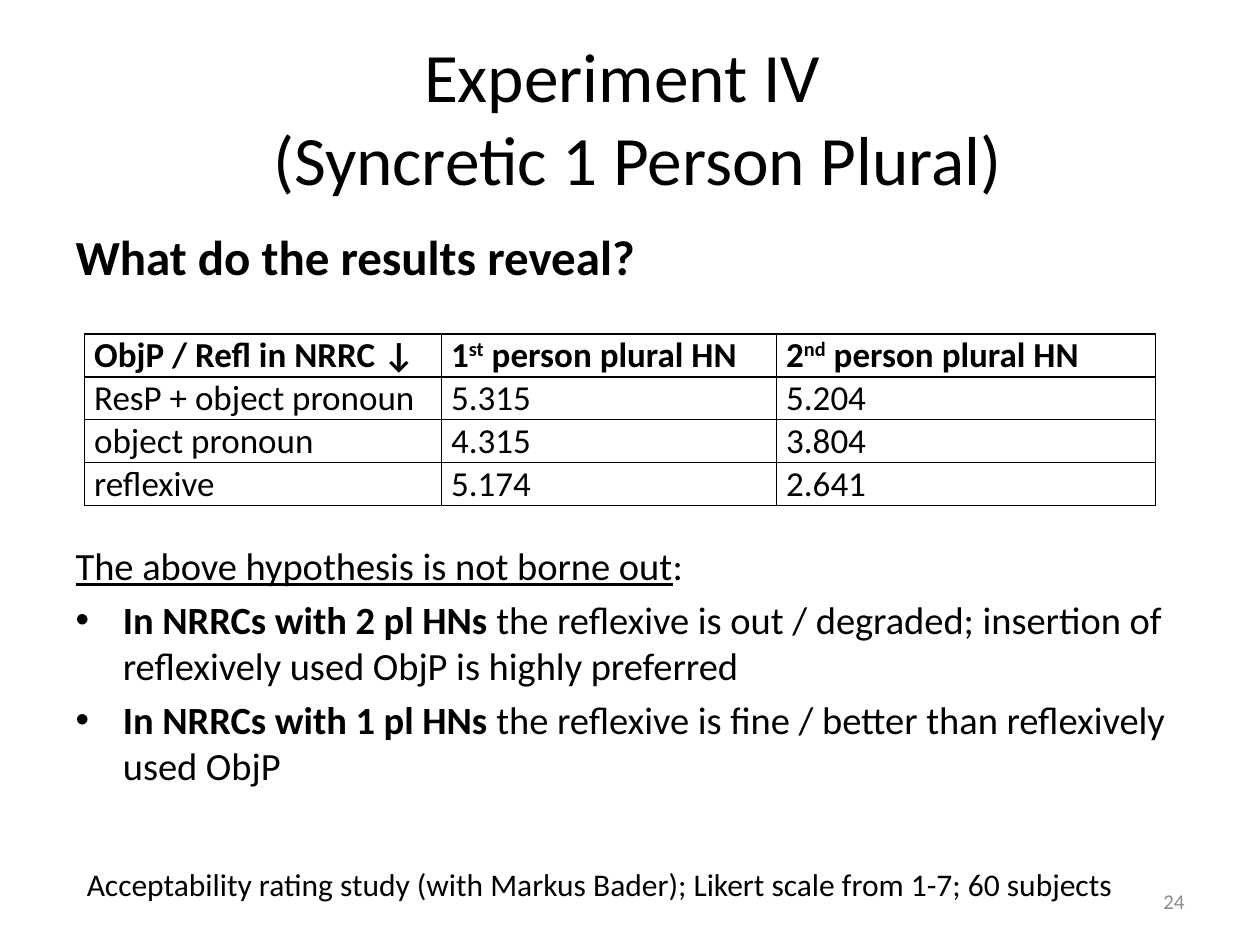
from lxml import etree
from pptx import Presentation
from pptx.dml.color import RGBColor
from pptx.enum.text import MSO_ANCHOR, MSO_AUTO_SIZE, PP_ALIGN
from pptx.oxml.ns import qn
from pptx.util import Pt

BLACK = RGBColor(0x00, 0x00, 0x00)
GREY = RGBColor(0x8C, 0x8C, 0x8C)
FONT = "Calibri"
NO_FIT = MSO_AUTO_SIZE.NONE
MIDDLE = MSO_ANCHOR.MIDDLE
LEFT, CENTER, RIGHT = PP_ALIGN.LEFT, PP_ALIGN.CENTER, PP_ALIGN.RIGHT


def add_span(para, text, size, bold=False, color=BLACK):
    span = para.add_run()
    span.text = text
    span.font.name = FONT
    span.font.size = Pt(size)
    span.font.bold = bold
    span.font.color.rgb = color
    return span


def add_borders(cell):
    properties = cell._tc.get_or_add_tcPr()
    for side in ("lnL", "lnR", "lnT", "lnB"):
        line = etree.SubElement(properties, qn(f"a:{side}"), w=str(Pt(1)))
        fill = etree.SubElement(line, qn("a:solidFill"))
        etree.SubElement(fill, qn("a:srgbClr"), val=str(BLACK))


deck = Presentation()
deck.slide_width, deck.slide_height = Pt(720), Pt(540)
page = deck.slides.add_slide(deck.slide_layouts[1])

# Title
title = page.shapes.title
title.left, title.top, title.width, title.height = Pt(36), Pt(21.6), Pt(648), Pt(90)
title.text_frame.text = "Experiment IV \v (Syncretic 1 Person Plural)"
title.text_frame.auto_size = NO_FIT
title.text_frame.vertical_anchor = MIDDLE
title_para = title.text_frame.paragraphs[0]
title_para.alignment = CENTER
for span in title_para.runs:
    span.font.name = FONT
    span.font.size = Pt(39.6)
    span.font.color.rgb = BLACK

# Question, finding and bullets
body = page.placeholders[1]
body.left, body.top, body.width, body.height = Pt(36), Pt(126), Pt(648), Pt(356.4)
frame = body.text_frame
frame.auto_size = NO_FIT

question = frame.paragraphs[0]
add_span(question, "What do the results reveal?", 28, bold=True)

finding = frame.add_paragraph()
finding.space_before = Pt(146.5)  # leaves room for the table
add_span(finding, "The above hypothesis is not borne out", 22).font.underline = True
add_span(finding, ":", 22)
for para in (question, finding):
    etree.SubElement(para._p.get_or_add_pPr(), qn("a:buNone"))

BULLETS = [
    ("In NRRCs with 2 pl HNs ",
     "the reflexive is out / degraded; insertion of reflexively used ObjP is highly preferred"),
    ("In NRRCs with 1 pl HNs ",
     "the reflexive is fine / better than reflexively used ObjP"),
]
for condition, result in BULLETS:
    para = frame.add_paragraph()
    add_span(para, condition, 22, bold=True)
    add_span(para, result, 22)

# Ratings table; a header is (text, superscript, text)
ROWS = [
    [("ObjP / Refl in NRRC ↓",), ("1", "st", " person plural HN"), ("2", "nd", " person plural HN")],
    [("ResP + object pronoun",), ("5.315",), ("5.204",)],
    [("object pronoun",), ("4.315",), ("3.804",)],
    [("reflexive",), ("5.174",), ("2.641",)],
]
COLUMN_WIDTHS = [204, 191.5, 216.5]
ROW_HEIGHT = 24.4
table = page.shapes.add_table(
    len(ROWS), len(COLUMN_WIDTHS), Pt(48.4), Pt(190.8),
    Pt(sum(COLUMN_WIDTHS)), Pt(ROW_HEIGHT * len(ROWS))).table
table.first_row = False
table.horz_banding = False
for column, width in zip(table.columns, COLUMN_WIDTHS):
    column.width = Pt(width)
for row_index, row in enumerate(ROWS):
    table.rows[row_index].height = Pt(ROW_HEIGHT)
    for column_index, parts in enumerate(row):
        cell = table.cell(row_index, column_index)
        cell.margin_left = cell.margin_right = Pt(5.4)
        cell.margin_top = cell.margin_bottom = Pt(0)
        add_borders(cell)
        cell.fill.background()
        para = cell.text_frame.paragraphs[0]
        for part_index, part in enumerate(parts):
            span = add_span(para, part, 20, bold=row_index == 0)
            if part_index == 1:
                span._r.get_or_add_rPr().set("baseline", "30000")

# Study note and page number
NOTES = [
    ("Acceptability rating study (with Markus Bader); Likert scale from 1-7; 60 subjects",
     42.5, 491, 617.8, 18, BLACK, LEFT),
    ("24", 516, 500.5, 168, 12, GREY, RIGHT),
]
for text, left, top, width, size, color, alignment in NOTES:
    box = page.shapes.add_textbox(Pt(left), Pt(top), Pt(width), Pt(28.8))
    box.text_frame.word_wrap = True
    box.text_frame.vertical_anchor = MIDDLE
    para = box.text_frame.paragraphs[0]
    para.alignment = alignment
    add_span(para, text, size, color=color)

deck.save("out.pptx")
